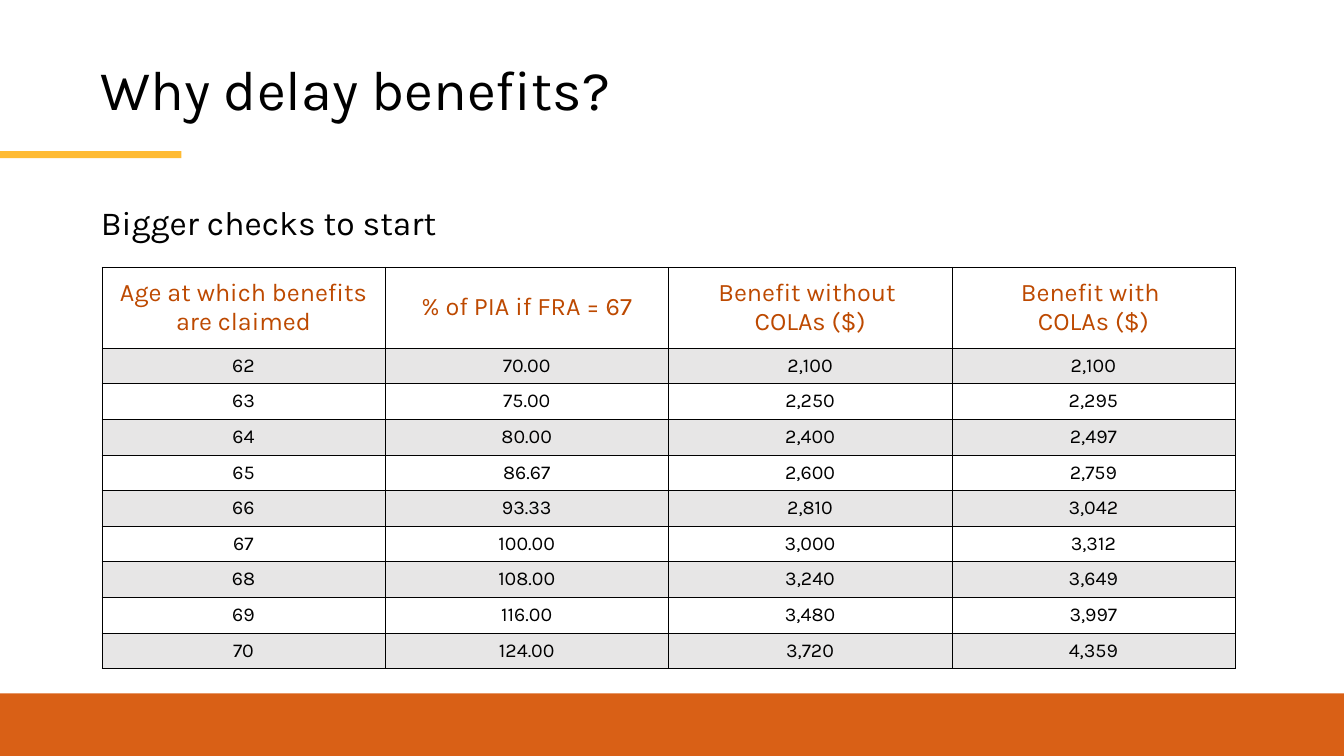
from lxml import etree
from pptx import Presentation
from pptx.dml.color import RGBColor
from pptx.enum.shapes import MSO_SHAPE
from pptx.enum.text import MSO_ANCHOR, MSO_AUTO_SIZE, PP_ALIGN
from pptx.oxml.ns import qn
from pptx.util import Inches, Pt

RECTANGLE = MSO_SHAPE.RECTANGLE
TOP, MIDDLE = MSO_ANCHOR.TOP, MSO_ANCHOR.MIDDLE
LEFT, CENTER = PP_ALIGN.LEFT, PP_ALIGN.CENTER
NO_AUTOFIT = MSO_AUTO_SIZE.NONE

COLORS = {
    "text": "000000",
    "heading": "BD4900",
    "footer": "D96016",
    "accent": "FFBB33",
    "band": "E7E6E6",
    "plain": "FFFFFF",
}
FONT = "Karla"

HEADINGS = [
    ["Age at which benefits", "are claimed"],
    ["% of PIA if FRA = 67"],
    ["Benefit without ", "COLAs ($)"],
    ["Benefit with ", "COLAs ($)"],
]
BENEFITS = [
    ("62", "70.00", "2,100", "2,100"),
    ("63", "75.00", "2,250", "2,295"),
    ("64", "80.00", "2,400", "2,497"),
    ("65", "86.67", "2,600", "2,759"),
    ("66", "93.33", "2,810", "3,042"),
    ("67", "100.00", "3,000", "3,312"),
    ("68", "108.00", "3,240", "3,649"),
    ("69", "116.00", "3,480", "3,997"),
    ("70", "124.00", "3,720", "4,359"),
]


def write(frame, lines, size, color, align):
    for index, line in enumerate(lines):
        paragraph = frame.add_paragraph() if index else frame.paragraphs[0]
        paragraph.alignment = align
        run = paragraph.add_run()
        run.text = line
        run.font.name = FONT
        run.font.size = Pt(size)
        run.font.color.rgb = RGBColor.from_string(COLORS[color])


def add_borders(cell):
    properties = cell._tc.get_or_add_tcPr()
    for index, side in enumerate(("a:lnL", "a:lnR", "a:lnT", "a:lnB")):
        border = etree.Element(qn(side), w=str(Pt(0.25)))
        fill = etree.SubElement(border, qn("a:solidFill"))
        etree.SubElement(fill, qn("a:srgbClr"), val=COLORS["text"])
        properties.insert(index, border)


prs = Presentation()
prs.slide_width = Inches(13.33)
prs.slide_height = Inches(7.5)
slide = prs.slides.add_slide(prs.slide_layouts[5])

title = slide.shapes.title
title.left, title.top = Inches(1), Inches(0.45)
title.width, title.height = Inches(11.47), Inches(1.3)
heading = title.text_frame
heading.margin_left = heading.margin_right = heading.margin_bottom = 0
heading.margin_top = Inches(0.17)
heading.vertical_anchor = TOP
heading.auto_size = NO_AUTOFIT
write(heading, ["Why delay benefits?"], 40, "text", LEFT)
heading.paragraphs[0].line_spacing = 0.9

for left, top, width, height, color in [
    (0, 6.88, 13.33, 0.62, "footer"),
    (0, 1.5, 1.8, 0.07, "accent"),
]:
    bar = slide.shapes.add_shape(
        RECTANGLE, Inches(left), Inches(top), Inches(width), Inches(height))
    bar.shadow.inherit = False
    bar.fill.solid()
    bar.fill.fore_color.rgb = RGBColor.from_string(COLORS[color])
    bar.line.fill.background()

subheading = slide.shapes.add_textbox(
    Inches(1), Inches(2), Inches(11.26), Inches(0.4)).text_frame
subheading.word_wrap = True
subheading.margin_left = subheading.margin_right = 0
subheading.margin_top = subheading.margin_bottom = 0
write(subheading, ["Bigger checks to start"], 24, "text", LEFT)

rows = [HEADINGS] + [[[value] for value in row] for row in BENEFITS]
benefits = slide.shapes.add_table(
    len(rows), len(HEADINGS),
    Inches(1.01), Inches(2.65), Inches(11.24), Inches(3.97)).table
for column in benefits.columns:
    column.width = Inches(2.81)

for row_index, row in enumerate(rows):
    is_heading = row_index == 0
    benefits.rows[row_index].height = Inches(0.8) if is_heading else Inches(3.17 / 9)
    background = COLORS["band" if row_index % 2 else "plain"]
    for column_index, lines in enumerate(row):
        cell = benefits.cell(row_index, column_index)
        cell.vertical_anchor = MIDDLE
        cell.margin_left = cell.margin_right = Inches(0.12 if column_index else 0)
        cell.margin_top = cell.margin_bottom = Inches(0.06 if column_index else 0)
        cell.fill.solid()
        cell.fill.fore_color.rgb = RGBColor.from_string(background)
        add_borders(cell)
        write(cell.text_frame, lines, 18 if is_heading else 14,
              "heading" if is_heading else "text", CENTER)

prs.save("out.pptx")
